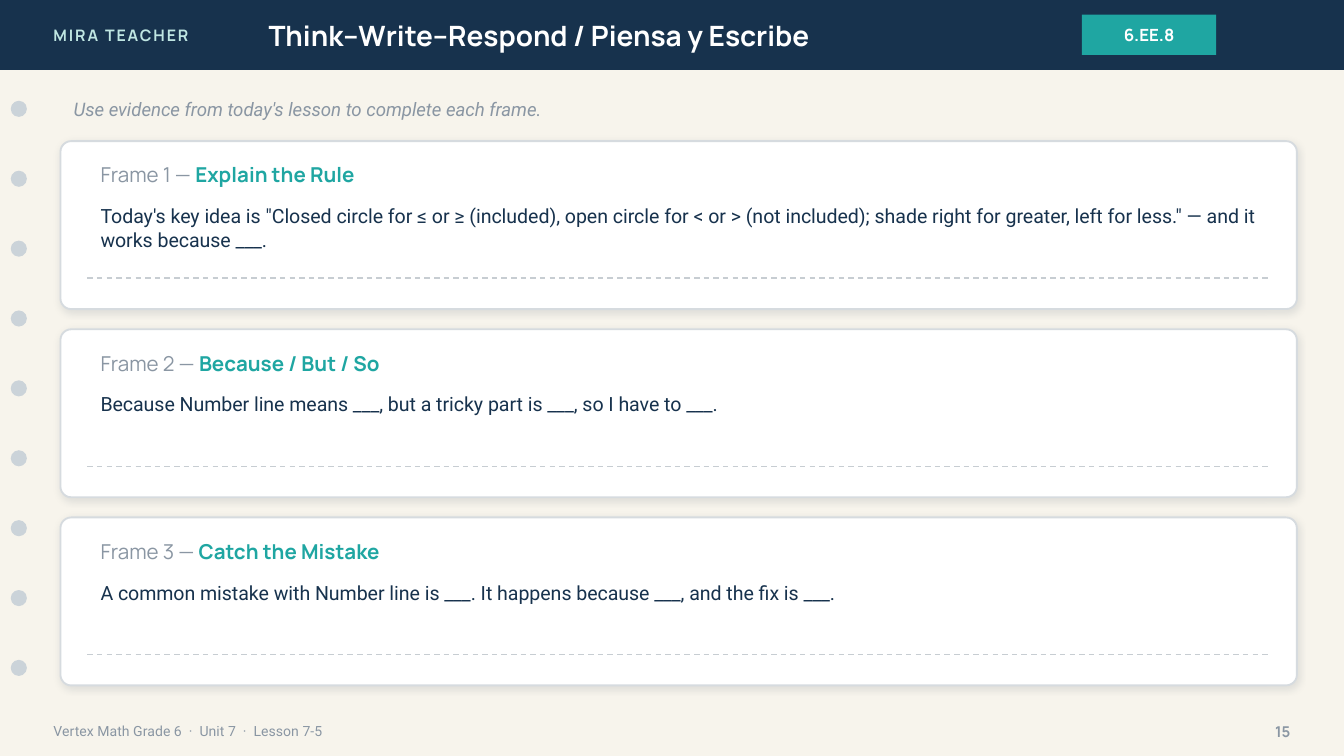
from lxml import etree
from pptx import Presentation
from pptx.dml.color import RGBColor
from pptx.enum import dml, shapes, text
from pptx.oxml import ns
from pptx.util import Pt

NAVY = RGBColor(0x17, 0x32, 0x4D)
TEAL = RGBColor(0x1F, 0xA6, 0xA2)
MINT = RGBColor(0xBF, 0xE6, 0xE2)
CREAM = RGBColor(0xF7, 0xF4, 0xEC)
WHITE = RGBColor(0xFF, 0xFF, 0xFF)
GREY = RGBColor(0x8A, 0x96, 0xA3)
HOLE = RGBColor(0xCB, 0xD3, 0xD9)
BORDER = RGBColor(0xD6, 0xDB, 0xDF)
RULE = RGBColor(0xC7, 0xCD, 0xD2)
SHADOW = "1C2E42"
HEADING, BODY = "Manrope", "Roboto"

BRAND = "MIRA TEACHER"
TITLE = "Think–Write–Respond / Piensa y Escribe"
STANDARD = "6.EE.8"
DIRECTIONS = "Use evidence from today's lesson to complete each frame."
FOOTER = "Vertex Math Grade 6  ·  Unit 7  ·  Lesson 7-5"
PAGE = "15"
FRAMES = [
    ("Explain the Rule",
     "Today's key idea is \"Closed circle for ≤ or ≥ (included), open circle for < or > "
     "(not included); shade right for greater, left for less.\" — and it works because ___."),
    ("Because / But / So",
     "Because Number line means ___, but a tricky part is ___, so I have to ___."),
    ("Catch the Mistake",
     "A common mistake with Number line is ___. It happens because ___, and the fix is ___."),
]

WIDTH, HEIGHT = 720, 405
HEADER_HEIGHT = 37.44
HOLE_COUNT, HOLE_TOP, HOLE_STEP, HOLE_SIZE = 9, 54, 37.44, 8.64
CARD_LEFT, CARD_TOP, CARD_WIDTH, CARD_HEIGHT, CARD_GAP = 32.4, 75.6, 662.4, 90, 10.8
CARD_PAD = 14.4
MIDDLE, TOP = text.MSO_ANCHOR.MIDDLE, text.MSO_ANCHOR.TOP


def add_run(paragraph, words, size, font, color, bold=False, italic=False, spacing=0):
    run = paragraph.add_run()
    run.text = words
    run.font.size = Pt(size)
    run.font.name = font
    run.font.color.rgb = color
    run.font.bold = bold
    run.font.italic = italic
    if spacing:
        run._r.get_or_add_rPr().set("spc", str(spacing * 100))


def add_words(slide, box, runs, anchor=MIDDLE, align=text.PP_ALIGN.LEFT):
    frame = slide.shapes.add_textbox(*map(Pt, box)).text_frame
    frame.word_wrap = True
    frame.vertical_anchor = anchor
    paragraph = frame.paragraphs[0]
    paragraph.alignment = align
    for run in runs:
        add_run(paragraph, *run)


def add_block(slide, kind, box, fill):
    block = slide.shapes.add_shape(kind, *map(Pt, box))
    block.shadow.inherit = False
    block.fill.solid()
    block.fill.fore_color.rgb = fill
    block.line.fill.background()
    return block


def add_soft_shadow(block):
    effects = block._element.spPr.find(ns.qn("a:effectLst"))
    shadow = etree.SubElement(effects, ns.qn("a:outerShdw"), blurRad=str(Pt(4)),
                              dist=str(Pt(1)), dir="5400000", algn="ctr", rotWithShape="0")
    color = etree.SubElement(shadow, ns.qn("a:srgbClr"), val=SHADOW)
    etree.SubElement(color, ns.qn("a:alpha"), val="10000")


def add_header(slide):
    add_block(slide, shapes.MSO_SHAPE.RECTANGLE, (0, 0, WIDTH, HEADER_HEIGHT), NAVY)
    add_words(slide, (21.6, 0, 172.8, HEADER_HEIGHT), [(BRAND, 8.5, HEADING, MINT, True, False, 1)])
    add_words(slide, (136.8, 0, 403.2, HEADER_HEIGHT), [(TITLE, 15, HEADING, WHITE, True)])
    badge = add_block(slide, shapes.MSO_SHAPE.RECTANGLE, (579.6, 7.92, 72, 21.6), TEAL)
    badge.text_frame.vertical_anchor = MIDDLE
    label = badge.text_frame.paragraphs[0]
    label.alignment = text.PP_ALIGN.CENTER
    add_run(label, STANDARD, 9, HEADING, WHITE, True)


def add_card(slide, number, heading, prompt):
    top = CARD_TOP + (number - 1) * (CARD_HEIGHT + CARD_GAP)
    left, width = CARD_LEFT + CARD_PAD, CARD_WIDTH - 2 * CARD_PAD
    card = add_block(slide, shapes.MSO_SHAPE.ROUNDED_RECTANGLE,
                     (CARD_LEFT, top, CARD_WIDTH, CARD_HEIGHT), WHITE)
    card.adjustments[0] = 0.064
    card.line.color.rgb = BORDER
    card.line.width = Pt(1)
    add_soft_shadow(card)
    add_words(slide, (left, top + 7.2, width, 21.6),
              [(f"Frame {number} — ", 11, HEADING, GREY), (heading, 11, HEADING, TEAL, True)])
    add_words(slide, (left, top + 30.24, width, 28.8), [(prompt, 10.5, BODY, NAVY)], TOP)
    rule_y = top + 73.44
    rule = slide.shapes.add_connector(shapes.MSO_CONNECTOR.STRAIGHT,
                                      *map(Pt, (left, rule_y, left + width, rule_y)))
    rule.line.color.rgb = RULE
    rule.line.width = Pt(0.75)
    rule.line.dash_style = dml.MSO_LINE.DASH
    etree.SubElement(rule._element.spPr, ns.qn("a:effectLst"))


def main():
    deck = Presentation()
    deck.slide_width, deck.slide_height = Pt(WIDTH), Pt(HEIGHT)
    slide = deck.slides.add_slide(deck.slide_layouts[6])
    slide.background.fill.solid()
    slide.background.fill.fore_color.rgb = CREAM

    add_header(slide)
    for index in range(HOLE_COUNT):
        add_block(slide, shapes.MSO_SHAPE.OVAL,
                  (5.76, HOLE_TOP + index * HOLE_STEP, HOLE_SIZE, HOLE_SIZE), HOLE)
    add_words(slide, (21.6, 381.6, 504, 20.16), [(FOOTER, 7.5, BODY, GREY)])
    add_words(slide, (662.4, 381.6, 36, 20.16), [(PAGE, 8, HEADING, GREY, True)],
              align=text.PP_ALIGN.RIGHT)
    add_words(slide, (CARD_LEFT, 47.52, CARD_WIDTH, 21.6),
              [(DIRECTIONS, 10, BODY, GREY, False, True)])
    for number, (heading, prompt) in enumerate(FRAMES, 1):
        add_card(slide, number, heading, prompt)
    deck.save("out.pptx")


if __name__ == "__main__":
    main()
